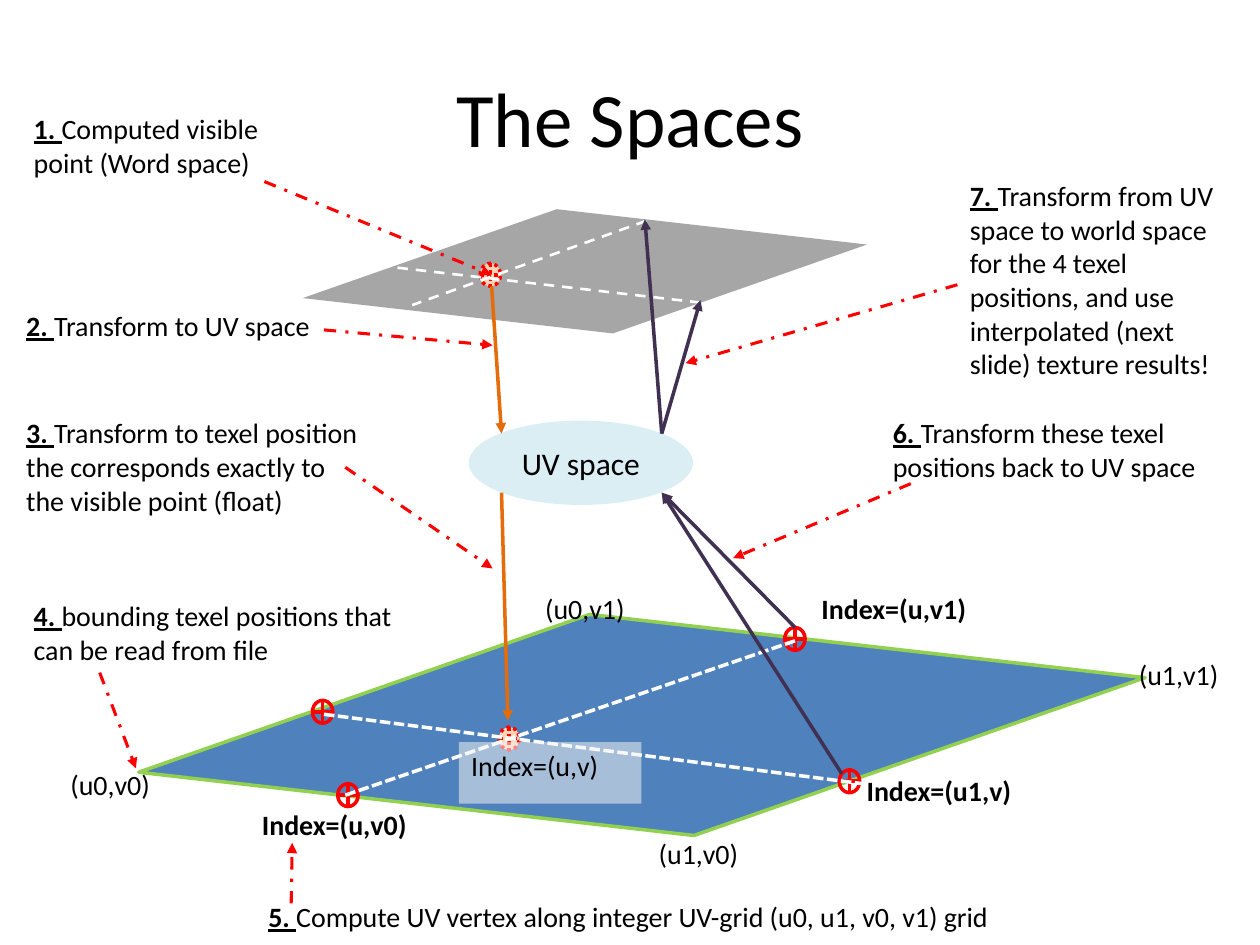
from pptx import Presentation
from pptx.dml.color import RGBColor
from pptx.enum.dml import MSO_LINE
from pptx.enum.shapes import MSO_CONNECTOR, MSO_SHAPE
from pptx.enum.text import MSO_ANCHOR, PP_ALIGN
from pptx.oxml.ns import qn
from pptx.util import Cm, Pt
from lxml import etree

LINE = MSO_CONNECTOR.STRAIGHT
SLANT, CROSS = MSO_SHAPE.PARALLELOGRAM, MSO_SHAPE.FLOWCHART_OR
OVAL, RECT = MSO_SHAPE.OVAL, MSO_SHAPE.RECTANGLE
DASH, DOT = MSO_LINE.DASH, MSO_LINE.ROUND_DOT
SHORT, MIXED = MSO_LINE.SQUARE_DOT, MSO_LINE.DASH_DOT
TOP, MIDDLE = MSO_ANCHOR.TOP, MSO_ANCHOR.MIDDLE
LEFT, CENTER = PP_ALIGN.LEFT, PP_ALIGN.CENTER

BLACK = RGBColor(0x00, 0x00, 0x00)
WHITE = RGBColor(0xFF, 0xFF, 0xFF)
RED = RGBColor(0xFF, 0x00, 0x00)
BLUE = RGBColor(0x4F, 0x81, 0xBD)
GREEN = RGBColor(0x92, 0xD0, 0x50)
GREY = RGBColor(0xA6, 0xA6, 0xA6)
PALE = RGBColor(0xF2, 0xF2, 0xF2)
PEACH = RGBColor(0xFC, 0xD5, 0xB5)
AQUA = RGBColor(0xDB, 0xEE, 0xF4)
ORANGE = RGBColor(0xE4, 0x6C, 0x0A)
PURPLE = RGBColor(0x40, 0x31, 0x52)

NOTES = [
    ("1. ", "Computed visible point (Word space)",
     (0.43, 2.13, 5.82, 2.49), (4.9, 1.53), (9.48, 3.41)),
    ("2. ", "Transform to UV space",
     (0.28, 6.1, 7.26, 1.6), (6.25, 0.55), (9.65, 0.86)),
    ("3. ", "Transform to texel position the corresponds exactly to the visible point (float)",
     (0.28, 8.26, 7.42, 2.49), (6.68, 1.16), (9.65, 3.2)),
    ("4. ", "bounding texel positions that can be read from file",
     (0.43, 11.94, 8.59, 2.01), (1.58, 1.62), (2.31, 3.55)),
    ("5. ", "Compute UV vertex along integer UV-grid (u0, u1, v0, v1) grid",
     (5.16, 18.01, 15.98, 1.04), (0.71, 0.2), (0.73, -1.02)),
    ("6. ", "Transform these texel positions back to UV space",
     (17.75, 8.26, 7.21, 2.34), (0.61, 1.49), (-2.97, 2.99)),
    ("7. ", "Transform from UV space to world space for the 4 texel positions, "
     "and use interpolated (next slide) texture results!",
     (19.3, 3.48, 5.64, 4.47), (0, 2.26), (-5.48, 3.84)),
]


def write(frame, text, head="", size=16, bold=False, align=LEFT, anchor=TOP, gap=3.2):
    """Fill a text frame with an optional underlined head and a text."""
    frame.word_wrap = True
    frame.vertical_anchor = anchor
    para = frame.paragraphs[0]
    para.alignment = align
    para.space_before = Pt(gap)
    for part, lead in ((head, True), (text, False)):
        if part:
            run = para.add_run()
            run.text = part
            font = run.font
            font.name, font.size = "Calibri", Pt(size)
            font.bold, font.underline = lead or bold, lead
            font.color.rgb = BLACK


def label(slide, box, text, **form):
    """Add a text box."""
    shape = slide.shapes.add_textbox(*map(Cm, box))
    write(shape.text_frame, text, **form)


def shift(box, spot):
    """Turn a spot inside a box into a spot on the slide."""
    return box[0] + spot[0], box[1] + spot[1]


def draw(slide, kind, box, fill=None, edge=None, dash=None):
    """Add a preset shape with its fill and outline."""
    shape = slide.shapes.add_shape(kind, *map(Cm, box))
    shape.shadow.inherit = False
    if fill:
        shape.fill.solid()
        shape.fill.fore_color.rgb = fill
    else:
        shape.fill.background()
    if edge:
        shape.line.color.rgb = edge
        shape.line.width = Pt(2)
        shape.line.dash_style = dash
    else:
        shape.line.fill.background()
    return shape


def link(slide, box, start, end, color, width=2, dash=None, arrow=True):
    """Join two spots of a box with a line or an arrow."""
    ends = shift(box, start) + shift(box, end)
    line = slide.shapes.add_connector(LINE, *map(Cm, ends))
    line.line.color.rgb = color
    line.line.width = Pt(width)
    line.line.dash_style = dash
    props = line.element.spPr
    if arrow:
        etree.SubElement(props.find(qn("a:ln")), qn("a:tailEnd"), type="triangle")
    etree.SubElement(props, qn("a:effectLst"))


def plane(slide, box, fill, edge=None):
    """Add a tilted plane that fills a box."""
    shape = draw(slide, SLANT, box, fill, edge)
    shape.adjustments[0] = 2.07
    shape.rotation = 6.5


def mark(slide, box, spot, **style):
    """Add a round texel mark at a spot of a box."""
    draw(slide, CROSS, shift(box, spot) + (0.41, 0.46), edge=RED, **style)


def world(slide, box):
    """Draw the world plane with its visible point."""
    plane(slide, box, GREY)
    mark(slide, box, (3.48, 1.02), fill=PEACH, dash=DOT)
    for start, end in (((6.83, 0.16), (2.11, 1.86)), ((7.92, 1.81), (1.67, 1.09))):
        link(slide, box, start, end, WHITE, 1.5, DASH, False)


def texel(slide, box):
    """Draw the texel plane with its marks, grid lines and labels."""
    plane(slide, box, BLUE, GREEN)
    for spot in ((3.33, 1.6), (12.85, 0.13), (3.84, 3.28), (13.95, 3)):
        mark(slide, box, spot)
    mark(slide, box, (7.09, 2.14), fill=PEACH, dash=DOT)
    for start, end in (((3.99, 3.51), (13.11, 0.38)), ((3.56, 1.88), (14.43, 3.28))):
        link(slide, box, start, end, WHITE, 2, SHORT, False)
    tags = (
        ("(u0,v0)", (-1.8, 2.82), False), ("(u0,v1)", (7.77, -0.71), False),
        ("(u1,v0)", (10.06, 4.22), False), ("(u1,v1)", (19.74, 0.61), False),
        ("Index=(u,v0)", (2.06, 3.63), True), ("Index=(u1,v)", (14.25, 2.95), True),
        ("Index=(u,v1)", (13.34, -0.71), True),
    )
    for text, spot, bold in tags:
        left, top = shift(box, spot)
        label(slide, (left, top, min(3.68, 25.4 - left), 1.24), text, bold=bold)
    panel = draw(slide, RECT, shift(box, (6.28, 2.44)) + (3.68, 1.24), PALE)
    tint = panel.element.spPr.find(qn("a:solidFill"))[0]
    etree.SubElement(tint, qn("a:alpha"), val="54000")
    write(panel.text_frame, "Index=(u,v)")


def centre(slide, box):
    """Draw the UV space oval and the arrows through it."""
    oval = draw(slide, OVAL, box, AQUA)
    write(oval.text_frame, "UV space", size=18, align=CENTER, anchor=MIDDLE, gap=0)
    arrows = (
        ((0.46, -2.71), (0.66, 0.26), ORANGE), ((0.66, 1.45), (0.79, 6.05), ORANGE),
        ((3.89, 0.26), (3.55, -4.06), PURPLE), ((3.89, 0.26), (4.67, -2.43), PURPLE),
        ((6.58, 4.17), (3.89, 1.45), PURPLE), ((7.52, 7.12), (3.89, 1.45), PURPLE),
    )
    for start, end, color in arrows:
        link(slide, box, start, end, color)


def note(slide, box, head, text, start, end):
    """Add a numbered note and its red pointer."""
    label(slide, box, text, head=head)
    link(slide, box, start, end, RED, 1.75, MIXED)


def main():
    """Build the slide and save it."""
    deck = Presentation()
    deck.slide_width, deck.slide_height = Cm(25.4), Cm(19.05)
    slide = deck.slides.add_slide(deck.slide_layouts[5])
    title = slide.shapes.title
    title.left, title.top, title.width, title.height = map(Cm, (1.27, 0.76, 22.86, 3.18))
    write(title.text_frame, "The Spaces", size=44, align=CENTER, anchor=MIDDLE, gap=0)
    texel(slide, (2.97, 12.52, 19.94, 4.19))
    world(slide, (6.2, 4.29, 11.18, 2.36))
    centre(slide, (9.45, 8.48, 4.52, 1.7))
    for head, text, box, start, end in NOTES:
        note(slide, box, head, text, start, end)
    deck.save("out.pptx")


if __name__ == "__main__":
    main()
